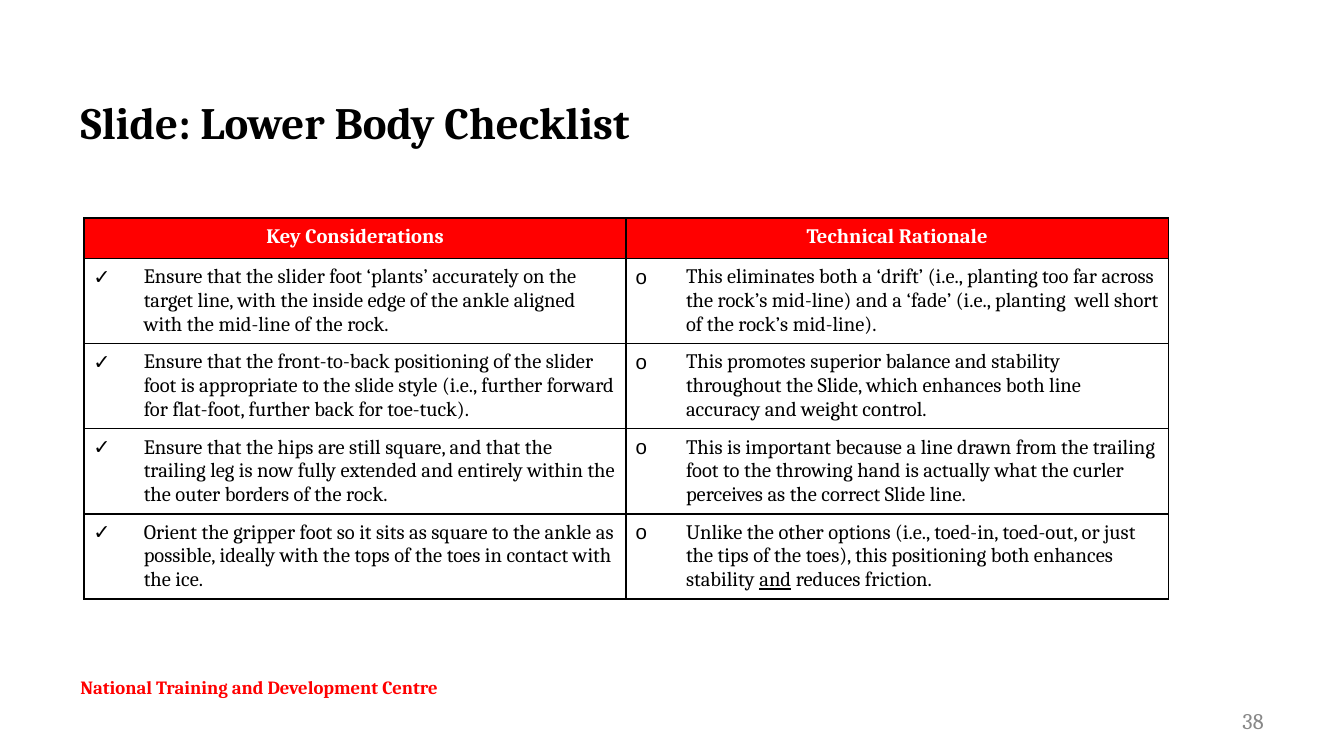
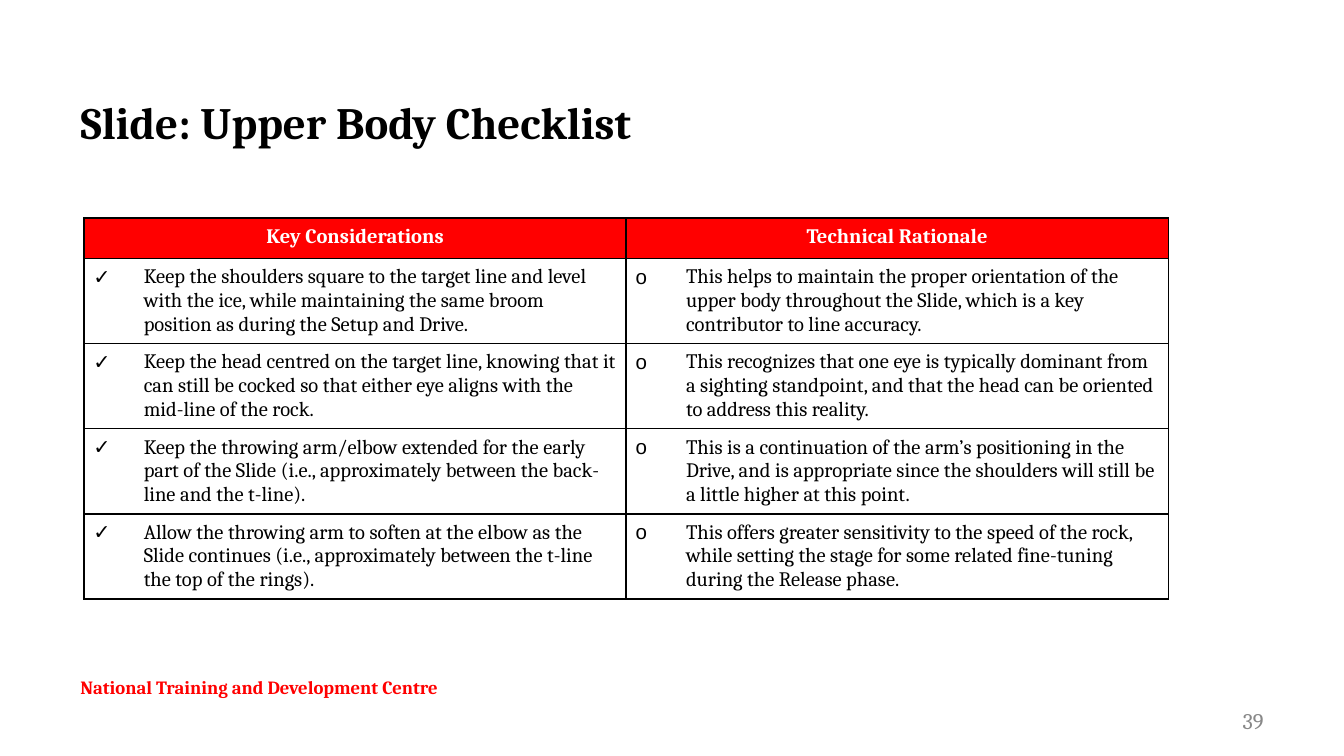
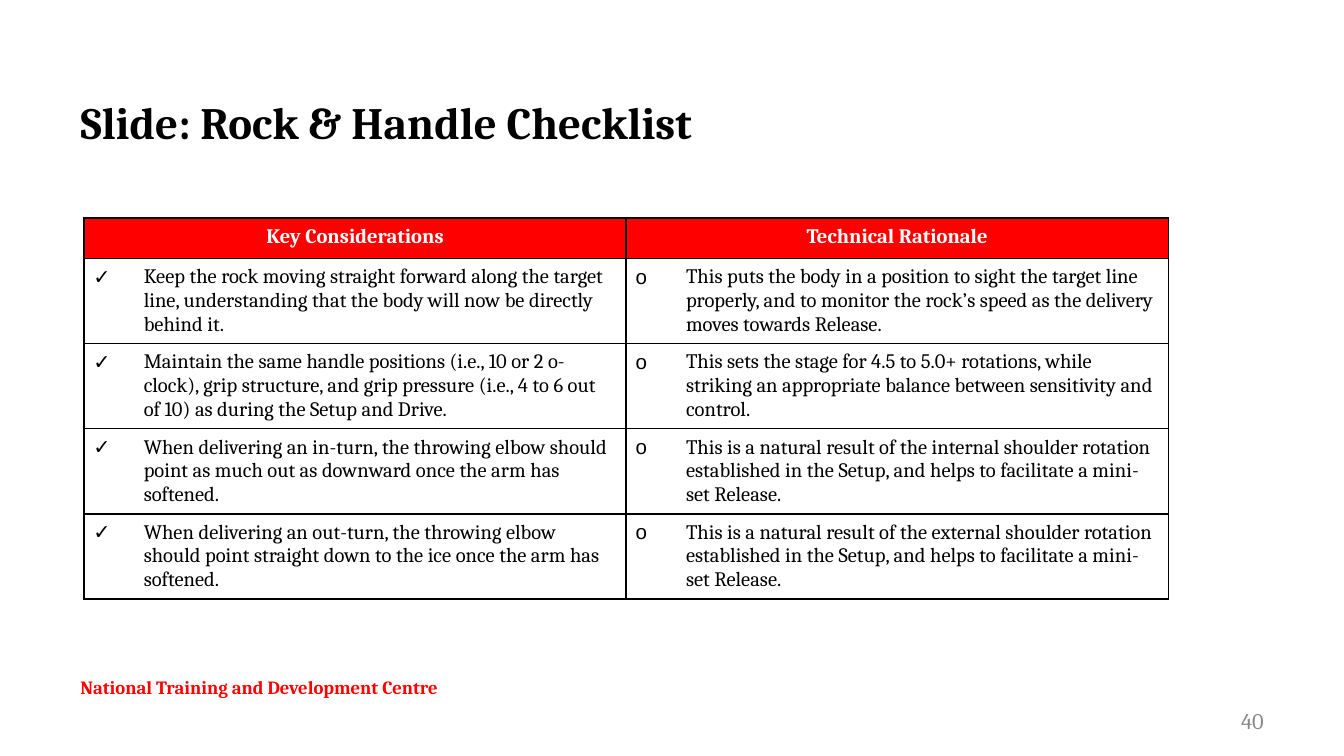
import pptx
import pptx.util
import pptx.dml.color
import pptx.enum.text
import lxml.etree

Pt = pptx.util.Pt
Align = pptx.enum.text.PP_ALIGN
Anchor = pptx.enum.text.MSO_ANCHOR

# Shared look
font = "Cambria"
hues = {"red": "FF0000", "black": "000000", "white": "FFFFFF", "gray": "888888"}
marks = ["✓", "o"]
heads = ["Key Considerations", "Technical Rationale"]
motto = "National Training and Development Centre"
first = 38

# Titles and table rows; underscores enclose underlined words
decks = [
    ("Slide: Lower Body Checklist", [
        ("Ensure that the slider foot ‘plants’ accurately on the target line, with the inside edge of the ankle aligned with the mid-line of the rock.",
         "This eliminates both a ‘drift’ (i.e., planting too far across the rock’s mid-line) and a ‘fade’ (i.e., planting  well short of the rock’s mid-line)."),
        ("Ensure that the front-to-back positioning of the slider foot is appropriate to the slide style (i.e., further forward for flat-foot, further back for toe-tuck).",
         "This promotes superior balance and stability throughout the Slide, which enhances both line accuracy and weight control."),
        ("Ensure that the hips are still square, and that the trailing leg is now fully extended and entirely within the the outer borders of the rock.",
         "This is important because a line drawn from the trailing foot to the throwing hand is actually what the curler perceives as the correct Slide line."),
        ("Orient the gripper foot so it sits as square to the ankle as possible, ideally with the tops of the toes in contact with the ice.",
         "Unlike the other options (i.e., toed-in, toed-out, or just the tips of the toes), this positioning both enhances stability _and_ reduces friction."),
    ]),
    ("Slide: Upper Body Checklist", [
        ("Keep the shoulders square to the target line and level with the ice, while maintaining the same broom position as during the Setup and Drive.",
         "This helps to maintain the proper orientation of the upper body throughout the Slide, which is a key contributor to line accuracy."),
        ("Keep the head centred on the target line, knowing that it can still be cocked so that either eye aligns with the mid-line of the rock.",
         "This recognizes that one eye is typically dominant from a sighting standpoint, and that the head can be oriented to address this reality."),
        ("Keep the throwing arm/elbow extended for the early part of the Slide (i.e., approximately between the back-line and the t-line).",
         "This is a continuation of the arm’s positioning in the Drive, and is appropriate since the shoulders will still be a little higher at this point."),
        ("Allow the throwing arm to soften at the elbow as the Slide continues (i.e., approximately between the t-line the top of the rings).",
         "This offers greater sensitivity to the speed of the rock, while setting the stage for some related fine-tuning during the Release phase."),
    ]),
    ("Slide: Rock & Handle Checklist", [
        ("Keep the rock moving straight forward along the target line, understanding that the body will now be directly behind it.",
         "This puts the body in a position to sight the target line properly, and to monitor the rock’s speed as the delivery moves towards Release."),
        ("Maintain the same handle positions (i.e., 10 or 2 o-clock), grip structure, and grip pressure (i.e., 4 to 6 out of 10) as during the Setup and Drive.",
         "This sets the stage for 4.5 to 5.0+ rotations, while striking an appropriate balance between sensitivity and control."),
        ("When delivering an in-turn, the throwing elbow should point as much out as downward once the arm has softened.",
         "This is a natural result of the internal shoulder rotation established in the Setup, and helps to facilitate a mini-set Release."),
        ("When delivering an out-turn, the throwing elbow should point straight down to the ice once the arm has softened.",
         "This is a natural result of the external shoulder rotation established in the Setup, and helps to facilitate a mini-set Release."),
    ]),
]


def write(frame, text, size, hue, bold=False, align=Align.LEFT):
    """Fill the first paragraph, underlining what stands between underscores."""
    para = frame.paragraphs[0]
    para.alignment = align
    for i, part in enumerate(text.split("_")):
        run = para.add_run()
        run.text = part
        run.font.name = font
        run.font.size = Pt(size)
        run.font.bold = bold
        run.font.color.rgb = pptx.dml.color.RGBColor.from_string(hues[hue])
        if i % 2:
            run.font.underline = True
    return para


def add(node, tag, **attrs):
    """Append a DrawingML element."""
    space = "{http://schemas.openxmlformats.org/drawingml/2006/main}"
    return lxml.etree.SubElement(node, space + tag, **attrs)


deck = pptx.Presentation()
deck.slide_width, deck.slide_height = Pt(720), Pt(405)

for page, (name, rows) in enumerate(decks, first):
    slide = deck.slides.add_slide(deck.slide_layouts[5])

    # Title
    title = slide.shapes.title
    title.left, title.top, title.width, title.height = Pt(36), Pt(31), Pt(585), Pt(68)
    frame = title.text_frame
    frame.auto_size = pptx.enum.text.MSO_AUTO_SIZE.NONE
    frame.vertical_anchor = Anchor.MIDDLE
    frame.margin_left = frame.margin_right = Pt(7.2)
    frame.margin_top = frame.margin_bottom = Pt(7.2)
    write(frame, name, 24, "black", True)

    # Page number and footer
    box = slide.shapes.add_textbox(Pt(516), Pt(375), Pt(168), Pt(21.6))
    box.text_frame.word_wrap = True
    box.text_frame.vertical_anchor = Anchor.MIDDLE
    write(box.text_frame, str(page), 12, "gray", align=Align.RIGHT)
    box = slide.shapes.add_textbox(Pt(36), Pt(358.5), Pt(273), Pt(31.5))
    box.text_frame.word_wrap = True
    write(box.text_frame, motto, 10, "red", True)

    # Checklist table
    grid = slide.shapes.add_table(len(rows) + 1, 2, Pt(45), Pt(116.8), Pt(581), Pt(202.4)).table
    grid.first_row = grid.horz_banding = False
    for col in grid.columns:
        col.width = Pt(290.5)
    for r, texts in enumerate([heads] + rows):
        grid.rows[r].height = Pt(45.2 if r else 21.6)
        for c, text in enumerate(texts):
            cell = grid.cell(r, c)
            props = cell._tc.get_or_add_tcPr()
            for side in ("lnL", "lnR", "lnT", "lnB"):
                line = add(props, side, w=str(Pt(1)))
                add(add(line, "solidFill"), "srgbClr", val=hues["black"])
            if r == 0:
                cell.fill.solid()
                cell.fill.fore_color.rgb = pptx.dml.color.RGBColor.from_string(hues["red"])
                write(cell.text_frame, text, 11, "white", True, Align.CENTER)
                continue
            cell.fill.background()
            cell.vertical_anchor = Anchor.MIDDLE
            cell.margin_left = cell.margin_right = Pt(5)
            cell.margin_top = cell.margin_bottom = Pt(3)
            para = write(cell.text_frame, text, 11, "black")
            form = para._p.get_or_add_pPr()
            form.set("marL", str(Pt(27)))
            form.set("indent", str(-Pt(27)))
            add(form, "buFont", typeface="Arial")
            add(form, "buChar", char=marks[c])

deck.save("out.pptx")
